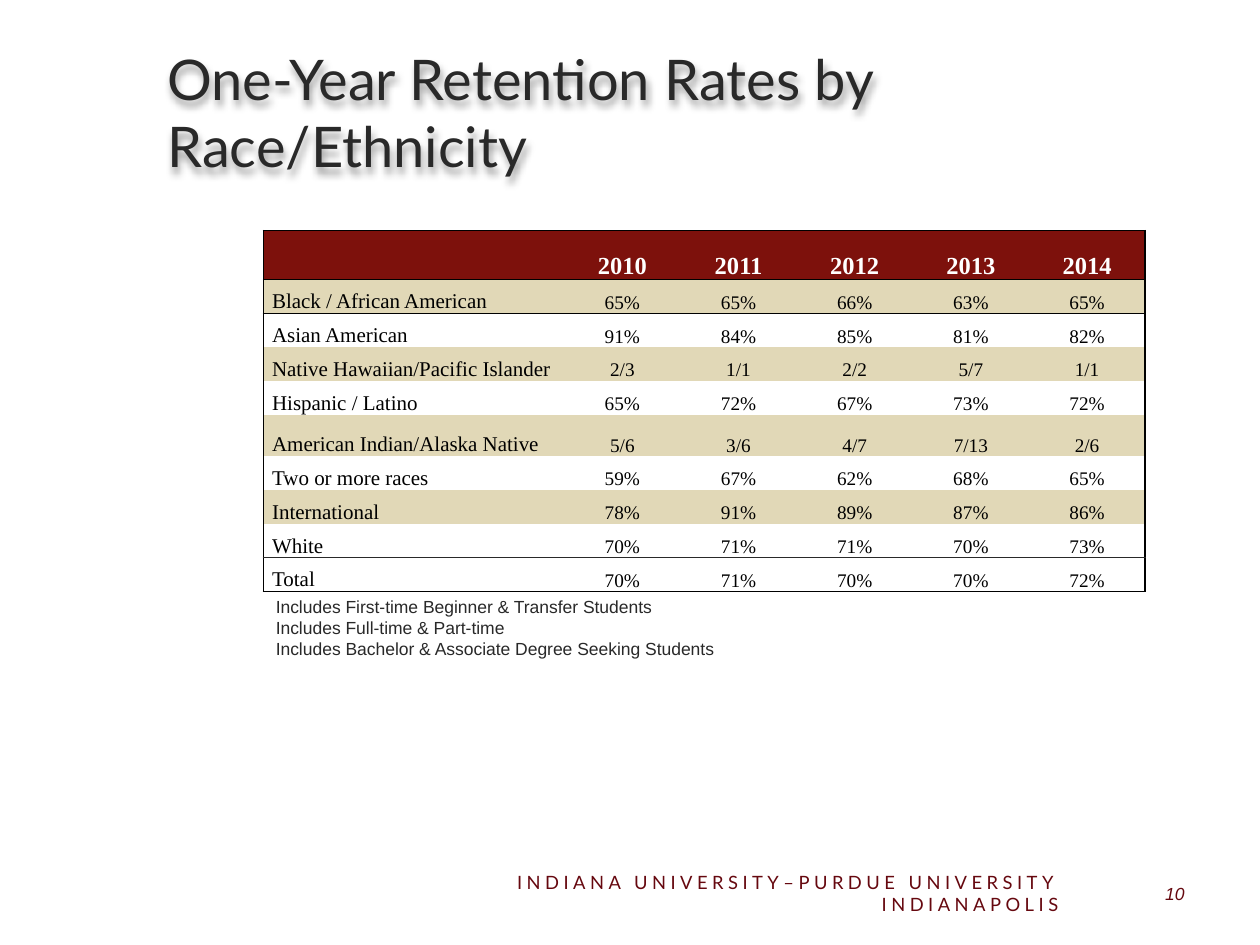
"""Build the slide on one-year retention rates by race and ethnicity."""
from lxml.etree import SubElement
from pptx import Presentation
from pptx.dml.color import RGBColor
from pptx.enum.text import MSO_ANCHOR, PP_ALIGN
from pptx.oxml import parse_xml
from pptx.oxml.ns import nsdecls, qn
from pptx.util import Pt

HEADER = ["", "2010", "2011", "2012", "2013", "2014"]
RATES = [
    ["Black / African American", "65%", "65%", "66%", "63%", "65%"],
    ["Asian American", "91%", "84%", "85%", "81%", "82%"],
    ["Native Hawaiian/Pacific Islander", "2/3", "1/1", "2/2", "5/7", "1/1"],
    ["Hispanic / Latino", "65%", "72%", "67%", "73%", "72%"],
    ["American Indian/Alaska Native", "5/6", "3/6", "4/7", "7/13", "2/6"],
    ["Two or more races", "59%", "67%", "62%", "68%", "65%"],
    ["International", "78%", "91%", "89%", "87%", "86%"],
    ["White", "70%", "71%", "71%", "70%", "73%"],
    ["Total", "70%", "71%", "70%", "70%", "72%"],
]
NOTES = [
    "Includes First-time Beginner & Transfer Students",
    "Includes Full-time & Part-time",
    "Includes Bachelor & Associate Degree Seeking Students",
]
TITLE = "One-Year Retention Rates by Race/Ethnicity"
FOOTER = "INDIANA UNIVERSITY–PURDUE UNIVERSITY INDIANAPOLIS"
PAGE_NUMBER = "10"

INK, BLACK, WHITE = "292929", "000000", "FFFFFF"
CRIMSON, MAROON, TAN = "66080F", "7D110C", "E1D8B7"
LABEL_WIDTH, TABLE_WIDTH = 172, 504
HEADER_HEIGHT, ROW_HEIGHT, TALL_HEIGHT = 28, 19.35, 23.6
TALL_ROW = 5
NO_GRID_STYLE = "{2D5ABB26-0587-4C30-8999-92F81FD0307C}"

TITLE_FORMAT = {"name": "Lato", "size": Pt(32)}
FOOTER_FORMAT = {"name": "Lato", "size": Pt(10.5)}
NUMBER_FORMAT = {"name": "Arial", "size": Pt(10), "italic": True}
NOTE_FORMAT = {"name": "Arial", "size": Pt(10)}
HEADER_FORMAT = {"name": "Times New Roman", "size": Pt(14), "bold": True}
LABEL_FORMAT = {"name": "Times New Roman", "size": Pt(12), "bold": False}
VALUE_FORMAT = {"name": "Times New Roman", "size": Pt(11), "bold": False}


def color(value):
    """Turn a hex string into a colour."""
    return RGBColor.from_string(value)


def set_font(font, formats, ink):
    """Apply format values and a colour to a font."""
    for name, value in formats.items():
        setattr(font, name, value)
    font.color.rgb = color(ink)


def add_text(page, place, lines, formats, ink, align=PP_ALIGN.LEFT, anchor=MSO_ANCHOR.MIDDLE):
    """Add a wrapped text box with one paragraph per line."""
    box = page.shapes.add_textbox(*map(Pt, place))
    frame = box.text_frame
    frame.word_wrap = True
    frame.vertical_anchor = anchor
    for index, line in enumerate(lines):
        para = frame.add_paragraph() if index else frame.paragraphs[0]
        para.alignment = align
        span = para.add_run()
        span.text = line
        set_font(span.font, formats, ink)
    return box


def add_shadow(box):
    """Give the text of an unfilled box a soft shadow."""
    box._element.spPr.append(parse_xml(
        f'<a:effectLst {nsdecls("a")}><a:outerShdw blurRad="50800" dist="38100" dir="5400000">'
        '<a:srgbClr val="000000"><a:alpha val="40000"/></a:srgbClr></a:outerShdw></a:effectLst>'))


def add_border(cell, side, ink):
    """Draw a one-point line on one side of a cell."""
    line = SubElement(cell._tc.get_or_add_tcPr(), qn(f"a:ln{side}"), w=str(Pt(1)))
    fill = SubElement(line, qn("a:solidFill"))
    SubElement(fill, qn("a:srgbClr"), val=ink)


def cell_borders(row, column, last_row, last_column):
    """List the sides and colours of the lines around a cell."""
    top = {0: BLACK, 1: BLACK, last_row: INK}
    bottom = {0: BLACK, last_row - 1: INK, last_row: BLACK}
    sides = {"L": {0: BLACK}.get(column), "R": {last_column: BLACK}.get(column),
             "T": top.get(row), "B": bottom.get(row)}
    return [(side, ink) for side, ink in sides.items() if ink]


def fill_cell(cell, text, row, column):
    """Set the text, fill and layout of a cell."""
    cell.margin_left = cell.margin_right = Pt(5)
    cell.margin_top = cell.margin_bottom = 0
    cell.vertical_anchor = MSO_ANCHOR.BOTTOM
    cell.fill.solid()
    cell.fill.fore_color.rgb = color(MAROON if row == 0 else TAN if row % 2 and row < len(RATES) else WHITE)
    para = cell.text_frame.paragraphs[0]
    para.line_spacing = 1.07
    para.alignment = PP_ALIGN.CENTER if column else PP_ALIGN.LEFT
    if text:
        span = para.add_run()
        span.text = text
        formats = HEADER_FORMAT if row == 0 else VALUE_FORMAT if column else LABEL_FORMAT
        set_font(span.font, formats, BLACK if row else WHITE)


def add_rates(page):
    """Add the table of retention rates."""
    rows = [HEADER] + RATES
    last_row, last_column = len(rows) - 1, len(HEADER) - 1
    heights = [HEADER_HEIGHT] + [ROW_HEIGHT] * last_row
    heights[TALL_ROW] = TALL_HEIGHT
    widths = [LABEL_WIDTH] + [(TABLE_WIDTH - LABEL_WIDTH) / last_column] * last_column
    table = page.shapes.add_table(
        len(rows), len(HEADER), Pt(150.5), Pt(131.8), Pt(TABLE_WIDTH), Pt(sum(heights))).table
    table.first_row = table.horz_banding = False
    table._tbl.tblPr.find(qn("a:tableStyleId")).text = NO_GRID_STYLE
    for column, width in zip(table.columns, widths):
        column.width = Pt(width)
    for row, (values, height) in enumerate(zip(rows, heights)):
        table.rows[row].height = Pt(height)
        for column, text in enumerate(values):
            cell = table.cell(row, column)
            for side, ink in cell_borders(row, column, last_row, last_column):
                add_border(cell, side, ink)
            fill_cell(cell, text, row, column)


def main():
    """Build and save the deck."""
    deck = Presentation()
    deck.slide_width, deck.slide_height = Pt(720), Pt(540)
    page = deck.slides.add_slide(deck.slide_layouts[6])
    add_shadow(add_text(page, (88.6, 21.6, 624.2, 84.2), [TITLE], TITLE_FORMAT, INK))
    footer = add_text(page, (247.7, 496, 364.3, 28.8), [FOOTER], FOOTER_FORMAT, CRIMSON, PP_ALIGN.RIGHT)
    footer.text_frame.paragraphs[0].runs[0].font._element.set("spc", "260")
    add_text(page, (619.2, 496, 64.8, 28.8), [PAGE_NUMBER], NUMBER_FORMAT, CRIMSON, PP_ALIGN.RIGHT)
    add_rates(page)
    add_text(page, (150.5, 337, 497.5, 43.9), NOTES, NOTE_FORMAT, INK, anchor=MSO_ANCHOR.TOP)
    deck.save("out.pptx")


if __name__ == "__main__":
    main()
